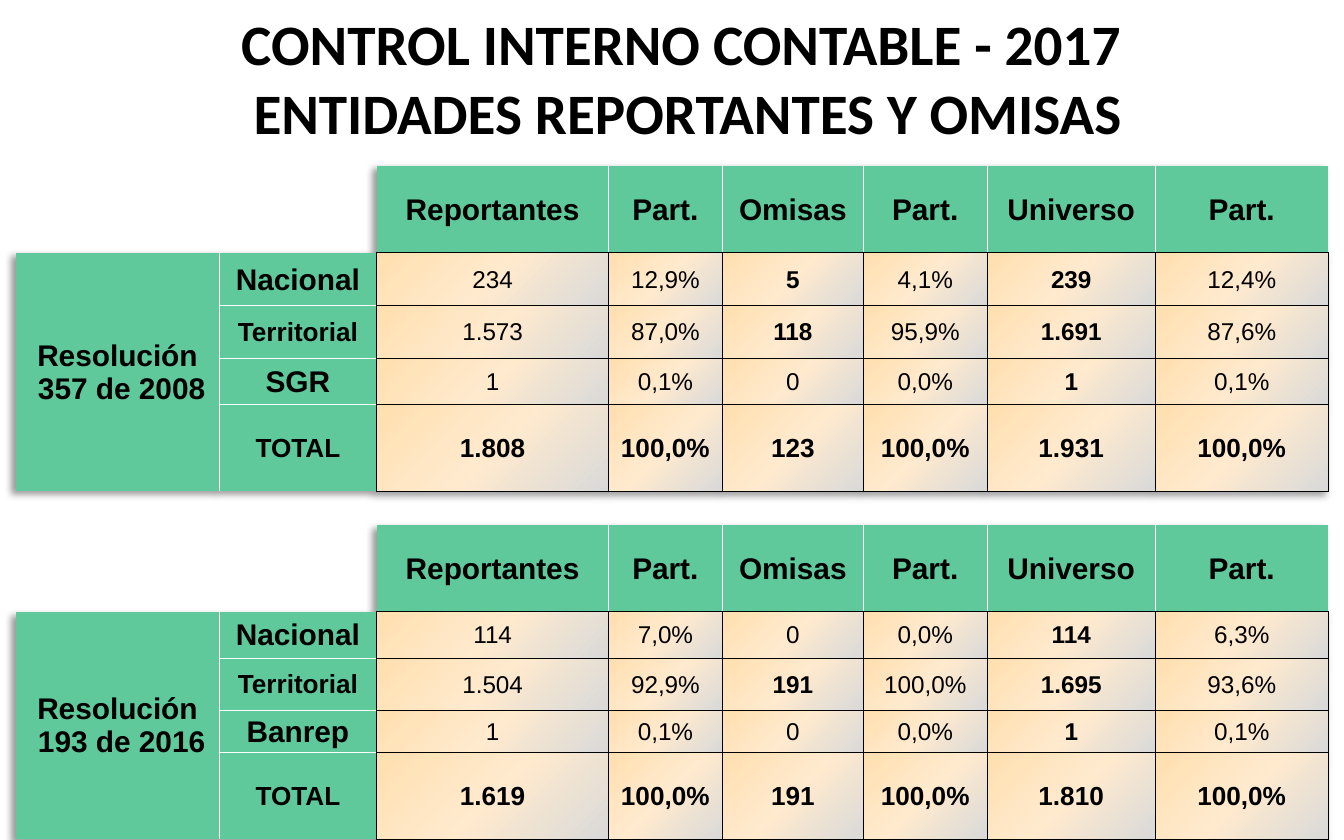
from lxml.etree import SubElement
from pptx import Presentation
from pptx.dml.color import RGBColor
from pptx.enum.text import MSO_ANCHOR, MSO_AUTO_SIZE, PP_ALIGN
from pptx.oxml import parse_xml
from pptx.oxml.ns import nsdecls, qn
from pptx.util import Pt

BLACK, WHITE, GREEN = "000000", "FFFFFF", "60C99C"
GRADIENT = {0: "FFDFAF", 50: "FFEACE", 100: "D9D9D9"}
NO_STYLE = "{2D5ABB26-0587-4C30-8999-92F81FD0307C}"

COLUMN_WIDTHS = [108.75, 84.6, 124, 61.1, 75.5, 66.4, 90, 92.7]
HEADER_HEIGHT = TOTAL_HEIGHT = 46.6
GAP_HEIGHT = 18
HEADINGS = ["Reportantes", "Part.", "Omisas", "Part.", "Universo", "Part."]
LABEL_SIZES = {"Territorial": 14, "TOTAL": 14}
FIRST_VALUE_COLUMN = 2

RESOLUTIONS = [
    {
        "name": "Resolución\n 357 de 2008",
        "heights": [HEADER_HEIGHT, 28.1, 28.4, 24.6, TOTAL_HEIGHT],
        "entities": [
            ("Nacional", "234", "12,9%", "5", "4,1%", "239", "12,4%"),
            ("Territorial", "1.573", "87,0%", "118", "95,9%", "1.691", "87,6%"),
            ("SGR", "1", "0,1%", "0", "0,0%", "1", "0,1%"),
            ("TOTAL", "1.808", "100,0%", "123", "100,0%", "1.931", "100,0%"),
        ],
    },
    {
        "name": "Resolución\n 193 de 2016",
        "heights": [HEADER_HEIGHT, 24.9, 27.9, 22.5, TOTAL_HEIGHT],
        "entities": [
            ("Nacional", "114", "7,0%", "0", "0,0%", "114", "6,3%"),
            ("Territorial", "1.504", "92,9%", "191", "100,0%", "1.695", "93,6%"),
            ("Banrep", "1", "0,1%", "0", "0,0%", "1", "0,1%"),
            ("TOTAL", "1.619", "100,0%", "191", "100,0%", "1.810", "100,0%"),
        ],
    },
]


def set_all(target, values):
    for attribute, value in values.items():
        setattr(target, attribute, value)


def set_color(color_format, hex_color):
    color_format.rgb = RGBColor.from_string(hex_color)


def format_text(frame, font_name, size, bold=True):
    for paragraph in frame.paragraphs:
        paragraph.alignment = PP_ALIGN.CENTER
        for run in paragraph.runs:
            set_all(run.font, {"name": font_name, "size": Pt(size), "bold": bold})
            set_color(run.font.color, BLACK)


def set_borders(cell, borders):
    """Draw the sides in borders (L, R, T, B to colour) and hide the others."""
    properties = cell._tc.get_or_add_tcPr()
    for side in "LRTB":
        color = borders.get(side)
        paint = (f'<a:solidFill><a:srgbClr val="{color}"/></a:solidFill>'
                 if color else "<a:noFill/>")
        properties.append(parse_xml(
            f'<a:ln{side} {nsdecls("a")} w="{Pt(0.5)}">{paint}</a:ln{side}>'))


def fill_gradient(cell):
    stops = "".join(
        f'<a:gs pos="{position * 1000}"><a:srgbClr val="{color}"/></a:gs>'
        for position, color in GRADIENT.items())
    cell._tc.get_or_add_tcPr().append(parse_xml(
        f'<a:gradFill {nsdecls("a")}><a:gsLst>{stops}</a:gsLst>'
        '<a:lin ang="2700000" scaled="0"/></a:gradFill>'))


def write_cell(cell, text, size, borders, bold=True, is_value=False):
    cell.text = text
    format_text(cell.text_frame, "Arial", size, bold)
    set_borders(cell, borders)
    if is_value:
        fill_gradient(cell)
    else:
        cell.fill.solid()
        set_color(cell.fill.fore_color, GREEN)


def is_bold(entity, heading, value):
    return (entity == "TOTAL" or heading == "Universo"
            or (heading == "Omisas" and value != "0"))


def add_title(slide, left, top, width, height):
    title = slide.shapes.title
    set_all(title, {"left": Pt(left), "top": Pt(top),
                    "width": Pt(width), "height": Pt(height)})
    frame = title.text_frame
    frame.text = "CONTROL INTERNO CONTABLE - 2017 \vENTIDADES REPORTANTES Y OMISAS"
    set_all(frame, {"word_wrap": True, "auto_size": MSO_AUTO_SIZE.NONE,
                    "vertical_anchor": MSO_ANCHOR.TOP,
                    "margin_top": Pt(4.5), "margin_bottom": 0})
    format_text(frame, "Calibri", 30.6)


def fill_resolution(table, top_row, resolution):
    # Column headings
    last = len(HEADINGS) - 1
    for index, heading in enumerate(HEADINGS):
        borders = {"B": BLACK}
        if index > 0:
            borders["L"] = WHITE
        if index < last:
            borders["R"] = WHITE
        write_cell(table.cell(top_row, FIRST_VALUE_COLUMN + index), heading, 16, borders)

    # Name of the resolution, beside all its entities
    entities = resolution["entities"]
    name_cell = table.cell(top_row + 1, 0)
    name_cell.merge(table.cell(top_row + len(entities), 0))
    write_cell(name_cell, resolution["name"], 16, {"R": WHITE})

    # Entities and their values
    for offset, (entity, *values) in enumerate(entities):
        row = top_row + 1 + offset
        borders = {"L": WHITE, "R": BLACK}
        if offset > 0:
            borders["T"] = WHITE
        if entity != "TOTAL":
            borders["B"] = WHITE
        write_cell(table.cell(row, 1), entity, LABEL_SIZES.get(entity, 16), borders)
        value_size = 14 if entity == "TOTAL" else 13
        for index, (heading, value) in enumerate(zip(HEADINGS, values)):
            write_cell(table.cell(row, FIRST_VALUE_COLUMN + index), value, value_size,
                       dict.fromkeys("LRTB", BLACK),
                       is_bold(entity, heading, value), is_value=True)


def add_results(slide, left, top):
    heights = RESOLUTIONS[0]["heights"] + [GAP_HEIGHT] + RESOLUTIONS[1]["heights"]
    frame = slide.shapes.add_table(
        len(heights), len(COLUMN_WIDTHS), Pt(left), Pt(top),
        Pt(sum(COLUMN_WIDTHS)), Pt(sum(heights)))
    table = frame.table
    set_all(table, {"first_row": False, "horz_banding": False})
    for column, width in zip(table.columns, COLUMN_WIDTHS):
        column.width = Pt(width)
    for row, height in zip(table.rows, heights):
        row.height = Pt(height)

    # Plain style and a soft shadow towards the lower left
    properties = table._tbl.tblPr
    properties.find(qn("a:tableStyleId")).text = NO_STYLE
    properties.insert(0, parse_xml(
        f'<a:effectLst {nsdecls("a")}><a:outerShdw blurRad="{Pt(4)}" dist="{Pt(3)}" '
        f'dir="8100000" algn="tr" rotWithShape="0"><a:srgbClr val="{BLACK}">'
        '<a:alpha val="40000"/></a:srgbClr></a:outerShdw></a:effectLst>'))

    top_row = 0
    for resolution in RESOLUTIONS:
        fill_resolution(table, top_row, resolution)
        top_row += len(resolution["heights"]) + 1

    # Tight margins; small type keeps empty cells from stretching their rows
    for cell in table.iter_cells():
        set_all(cell, {"vertical_anchor": MSO_ANCHOR.MIDDLE, "margin_left": Pt(0.7),
                       "margin_right": Pt(0.7), "margin_top": Pt(0.7),
                       "margin_bottom": 0})
        if not cell.text:
            SubElement(cell.text_frame.paragraphs[0]._p, qn("a:endParaRPr"), sz="800")


def main():
    presentation = Presentation()
    set_all(presentation, {"slide_width": Pt(720), "slide_height": Pt(450)})
    title_only = presentation.slide_layouts[5]
    slide = presentation.slides.add_slide(title_only)
    add_title(slide, 24.5, 0, 687.6, 76.3)
    add_results(slide, 8.6, 88.9)
    presentation.save("out.pptx")


if __name__ == "__main__":
    main()
